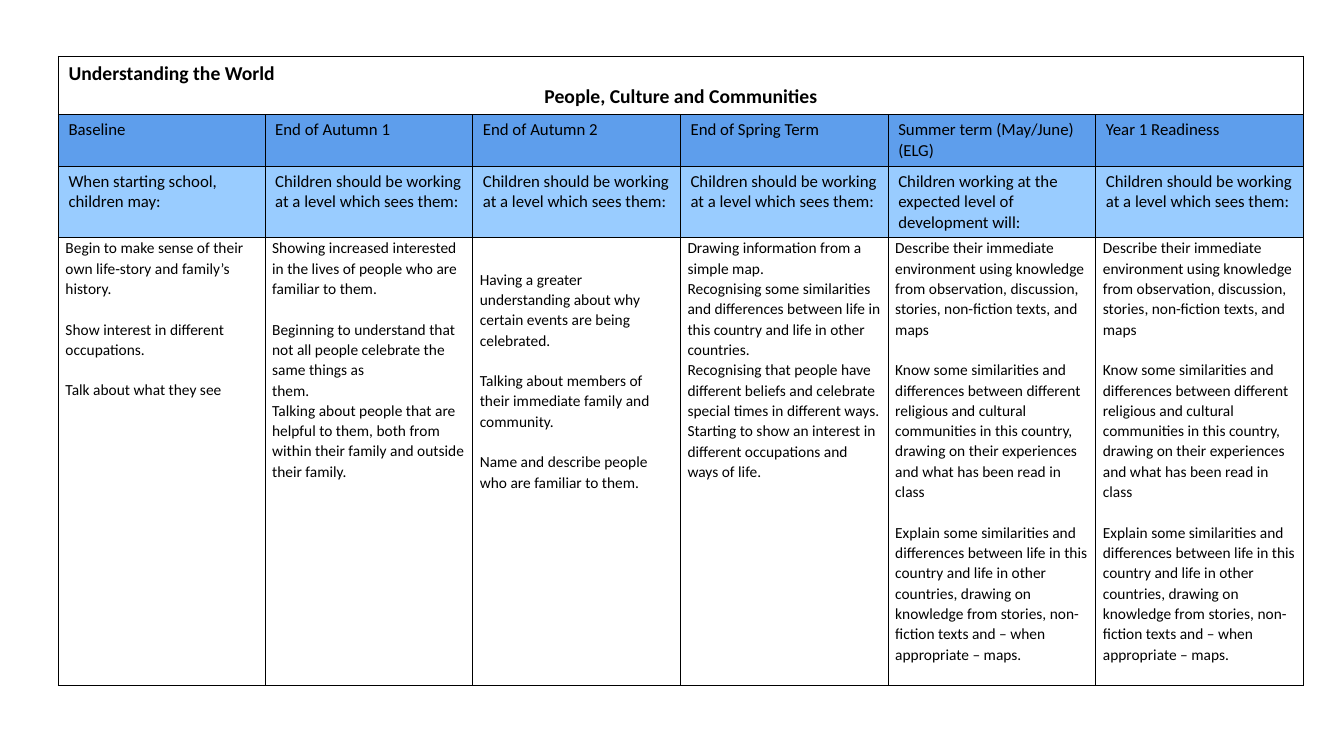
"""Build the People, Culture and Communities progression table slide."""
from dataclasses import dataclass

from lxml.etree import SubElement
from pptx import Presentation
from pptx.dml.color import RGBColor
from pptx.enum.text import PP_ALIGN
from pptx.oxml.ns import qn
from pptx.util import Inches, Pt

TITLES = ["Understanding the World", "People, Culture and Communities"]
STAGES = ["Baseline", "End of Autumn 1", "End of Autumn 2", "End of Spring Term",
          "Summer term (May/June) (ELG)", "Year 1 Readiness"]
WORKING = "Children should be working at a level which sees them:"
EXPECTATIONS = ["When starting school, children may:", WORKING, WORKING, WORKING,
                "Children working at the expected level of development will:", WORKING]
EARLY_LEARNING_GOALS = [
    ["Describe their immediate environment using knowledge from observation, "
     "discussion, stories, non-fiction texts, and maps"],
    ["Know some similarities and differences between different religious and cultural "
     "communities in this country, drawing on their experiences and what has been read "
     "in class"],
    ["Explain some similarities and differences between life in this country and life in "
     "other countries, drawing on knowledge from stories, non-fiction texts and – when "
     "appropriate – maps."],
]
OUTCOMES = [
    [["Begin to make sense of their own life-story and family’s history."],
     ["Show interest in different occupations."],
     ["Talk about what they see"]],
    [["Showing increased interested in the lives of people who are familiar to them."],
     ["Beginning to understand that not all people celebrate the same things as",
      "them.",
      "Talking about people that are helpful to them, both from within their family and "
      "outside their family."]],
    [["Having a greater understanding about why certain events are being celebrated."],
     ["Talking about members of their immediate family and community."],
     ["Name and describe people who are familiar to them."]],
    [["Drawing information from a simple map.",
      "Recognising some similarities and differences between life in this country and "
      "life in other countries.",
      "Recognising that people have different beliefs and celebrate special times in "
      "different ways.",
      "Starting to show an interest in different occupations and ways of life."]],
    EARLY_LEARNING_GOALS,
    EARLY_LEARNING_GOALS,
]
AUTUMN_2 = STAGES.index("End of Autumn 2")
COLUMN_WIDTHS = [2.05] + [2.06] * 5
ROW_HEIGHTS = [0.58, 0.51, 0.7, 4.44]


@dataclass(frozen=True)
class Theme:
    """Colours and type of the slide."""
    font: str = "Calibri"
    ink: str = "000000"
    stage_fill: str = "5E9EEC"
    expectation_fill: str = "99CCFF"
    title_size: float = 14
    header_size: float = 12
    body_size: float = 11
    body_spacing: float = 1.07
    block_gap: float = 14.4
    border: float = 1


THEME = Theme()


def write_paragraphs(cell, lines, size, bold=False):
    """Fill a cell with one paragraph per line and return the paragraphs."""
    cell.text = "\n".join(lines)
    for paragraph in cell.text_frame.paragraphs:
        font = paragraph.font
        font.name, font.size, font.bold = THEME.font, Pt(size), bold
        font.color.rgb = RGBColor.from_string(THEME.ink)
    return cell.text_frame.paragraphs


def draw_borders(cell):
    """Outline all four sides of a cell."""
    properties = cell._tc.get_or_add_tcPr()
    for side in ("a:lnL", "a:lnR", "a:lnT", "a:lnB"):
        line = SubElement(properties, qn(side), w=str(Pt(THEME.border)))
        fill = SubElement(line, qn("a:solidFill"))
        SubElement(fill, qn("a:srgbClr"), val=THEME.ink)


def write_header(cell, text, colour):
    """Write a coloured heading cell."""
    write_paragraphs(cell, [text], THEME.header_size)
    cell.fill.solid()
    cell.fill.fore_color.rgb = RGBColor.from_string(colour)


def write_outcomes(cell, blocks):
    """Write blocks of outcomes with a line of space between blocks."""
    cell.margin_left = cell.margin_right = Inches(0.07)
    cell.margin_top = cell.margin_bottom = 0
    lines = [line for block in blocks for line in block]
    paragraphs = write_paragraphs(cell, lines, THEME.body_size)
    for paragraph in paragraphs:
        paragraph.line_spacing = THEME.body_spacing
    position = 0
    for block in blocks[:-1]:
        position += len(block)
        paragraphs[position - 1].space_after = Pt(THEME.block_gap)


def main():
    """Create and save the slide."""
    presentation = Presentation()
    presentation.slide_width, presentation.slide_height = Inches(13.33), Inches(7.5)
    slide = presentation.slides.add_slide(presentation.slide_layouts[6])
    table = slide.shapes.add_table(
        len(ROW_HEIGHTS), len(COLUMN_WIDTHS), Inches(0.58), Inches(0.56),
        Inches(sum(COLUMN_WIDTHS)), Inches(sum(ROW_HEIGHTS))).table
    table.first_row = table.horz_banding = False
    for column, width in zip(table.columns, COLUMN_WIDTHS):
        column.width = Inches(width)
    for row, height in zip(table.rows, ROW_HEIGHTS):
        row.height = Inches(height)
        for cell in row.cells:
            draw_borders(cell)
            cell.fill.background()

    title_cell = table.cell(0, 0)
    title_cell.merge(table.cell(0, len(COLUMN_WIDTHS) - 1))
    titles = write_paragraphs(title_cell, TITLES, THEME.title_size, bold=True)
    titles[1].alignment = PP_ALIGN.CENTER

    for index, (stage, expectation, blocks) in enumerate(zip(STAGES, EXPECTATIONS, OUTCOMES)):
        write_header(table.cell(1, index), stage, THEME.stage_fill)
        write_header(table.cell(2, index), expectation, THEME.expectation_fill)
        write_outcomes(table.cell(3, index), blocks)
    table.cell(3, AUTUMN_2).margin_top = Inches(0.31)
    presentation.save("out.pptx")


if __name__ == "__main__":
    main()
